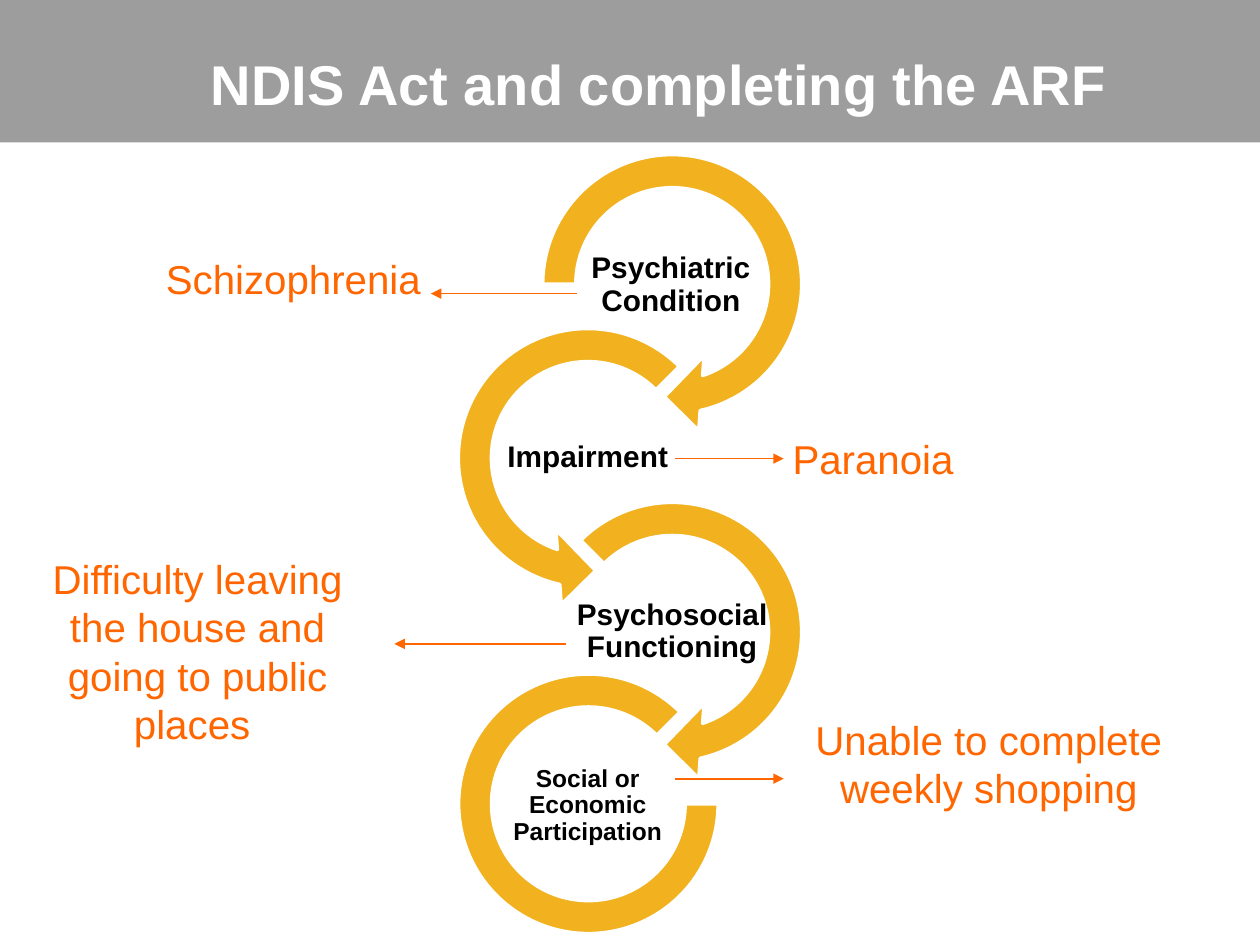
from lxml import etree
from pptx import Presentation
from pptx.dml.color import RGBColor
from pptx.enum.shapes import MSO_CONNECTOR, MSO_SHAPE
from pptx.enum.text import MSO_ANCHOR, PP_ALIGN
from pptx.oxml.ns import qn
from pptx.util import Inches, Pt

STRAIGHT = MSO_CONNECTOR.STRAIGHT
RECTANGLE = MSO_SHAPE.RECTANGLE
BLOCK_ARC = MSO_SHAPE.BLOCK_ARC
CIRCULAR_ARROW = MSO_SHAPE.CIRCULAR_ARROW
MIDDLE = MSO_ANCHOR.MIDDLE
BOTTOM = MSO_ANCHOR.BOTTOM
CENTER = PP_ALIGN.CENTER

FONT = "Arial"
GREY = "9D9D9D"
GOLD = "F2B21F"
ORANGE = "FF6600"
WHITE = "FFFFFF"
BLACK = "000000"

RING_LEFT, RING_RIGHT = 3.47, 4.14
RING_TOP, RING_STEP, RING_SIZE = 1.06, 1.38, 2.39
ARC_BOX = (3.64, 5.35, 2.06)
ARC_ADJUSTMENTS = (0, 189, 0.127)

RINGS = [
    (RING_RIGHT, 108, False),
    (RING_LEFT, 135, True),
    (RING_RIGHT, 135, False),
]
STAGES = [
    ("Psychiatric Condition", 4.66, 1.93, 1.33, 17),
    ("Impairment", 4, 3.3, 1.33, 17),
    ("Psychosocial Functioning", 4.53, 4.68, 1.61, 17),
    ("Social or Economic Participation", 4, 6.06, 1.33, 14),
]
EXAMPLES = [
    ("Schizophrenia", (0.84, 1.98, 2.98, 0.46), (4.58, 3.42, 2.33)),
    ("Paranoia", (5.44, 3.41, 2.98, 0.46), (5.36, 6.22, 3.64)),
    ("Difficulty leaving the house and going to public places ",
     (0.19, 4.56, 2.76, 1.21), (4.49, 3.13, 5.11)),
    ("Unable to complete weekly shopping",
     (6.36, 5.64, 2.98, 0.84), (5.36, 6.22, 6.18)),
]


def color(value):
    return RGBColor.from_string(value)


def add_filled_shape(slide, kind, box, fill, line=None, adjustments=()):
    shape = slide.shapes.add_shape(kind, *map(Inches, box))
    shape.shadow.inherit = False
    shape.fill.solid()
    shape.fill.fore_color.rgb = color(fill)
    if line:
        shape.line.color.rgb = color(line)
        shape.line.width = Pt(2)
    else:
        shape.line.fill.background()
    for index, value in enumerate(adjustments):
        shape.adjustments[index] = value
    return shape


def add_text(slide, text, box, size, text_color, bold=False,
             inset=0.0, anchor=MIDDLE, spacing=None):
    shape = slide.shapes.add_textbox(*map(Inches, box))
    frame = shape.text_frame
    frame.word_wrap = True
    frame.vertical_anchor = anchor
    frame.margin_left = frame.margin_right = Inches(inset)
    frame.margin_top = frame.margin_bottom = Inches(inset)
    frame.text = text
    paragraph = frame.paragraphs[0]
    paragraph.alignment = CENTER
    paragraph.line_spacing = spacing
    font = paragraph.runs[0].font
    font.name = FONT
    font.size = Pt(size)
    font.bold = bold
    font.color.rgb = color(text_color)


def add_ring(slide, index):
    if index == len(RINGS):
        left, top, size = ARC_BOX
        add_filled_shape(slide, BLOCK_ARC, (left, top, size, size),
                         GOLD, WHITE, ARC_ADJUSTMENTS)
        return
    left, start, mirrored = RINGS[index]
    box = (left, RING_TOP + index * RING_STEP, RING_SIZE, RING_SIZE)
    shape = add_filled_shape(slide, CIRCULAR_ARROW, box, GOLD, WHITE,
                             (0.11, 11.42, 45, start, 0.125))
    if mirrored:
        shape._element.spPr.xfrm.set("flipH", "1")


def add_arrow(slide, start_x, end_x, y):
    connector = slide.shapes.add_connector(
        STRAIGHT, Inches(start_x), Inches(y), Inches(end_x), Inches(y))
    connector.line.color.rgb = color(ORANGE)
    connector.line.width = Pt(1)
    line = connector.line._get_or_add_ln()
    etree.SubElement(line, qn("a:tailEnd"), type="triangle")
    etree.SubElement(connector._element.spPr, qn("a:effectLst"))


def main():
    presentation = Presentation()
    presentation.slide_width = Inches(10)
    presentation.slide_height = Inches(7.5)
    slide = presentation.slides.add_slide(presentation.slide_layouts[6])

    add_filled_shape(slide, RECTANGLE, (0, 0, 10.01, 1.13), GREY)
    add_text(slide, "NDIS Act and completing the ARF", (0.9, 0.26, 8.66, 0.67),
             32, WHITE, bold=True, anchor=BOTTOM)

    for index, (text, left, top, width, size) in enumerate(STAGES):
        add_ring(slide, index)
        add_text(slide, text, (left, top, width, 0.67), size, BLACK,
                 bold=True, inset=0.01, spacing=0.9)
    for text, box, arrow in EXAMPLES:
        add_text(slide, text, box, 23, ORANGE, inset=0.04)
        add_arrow(slide, *arrow)

    presentation.save("out.pptx")


if __name__ == "__main__":
    main()
